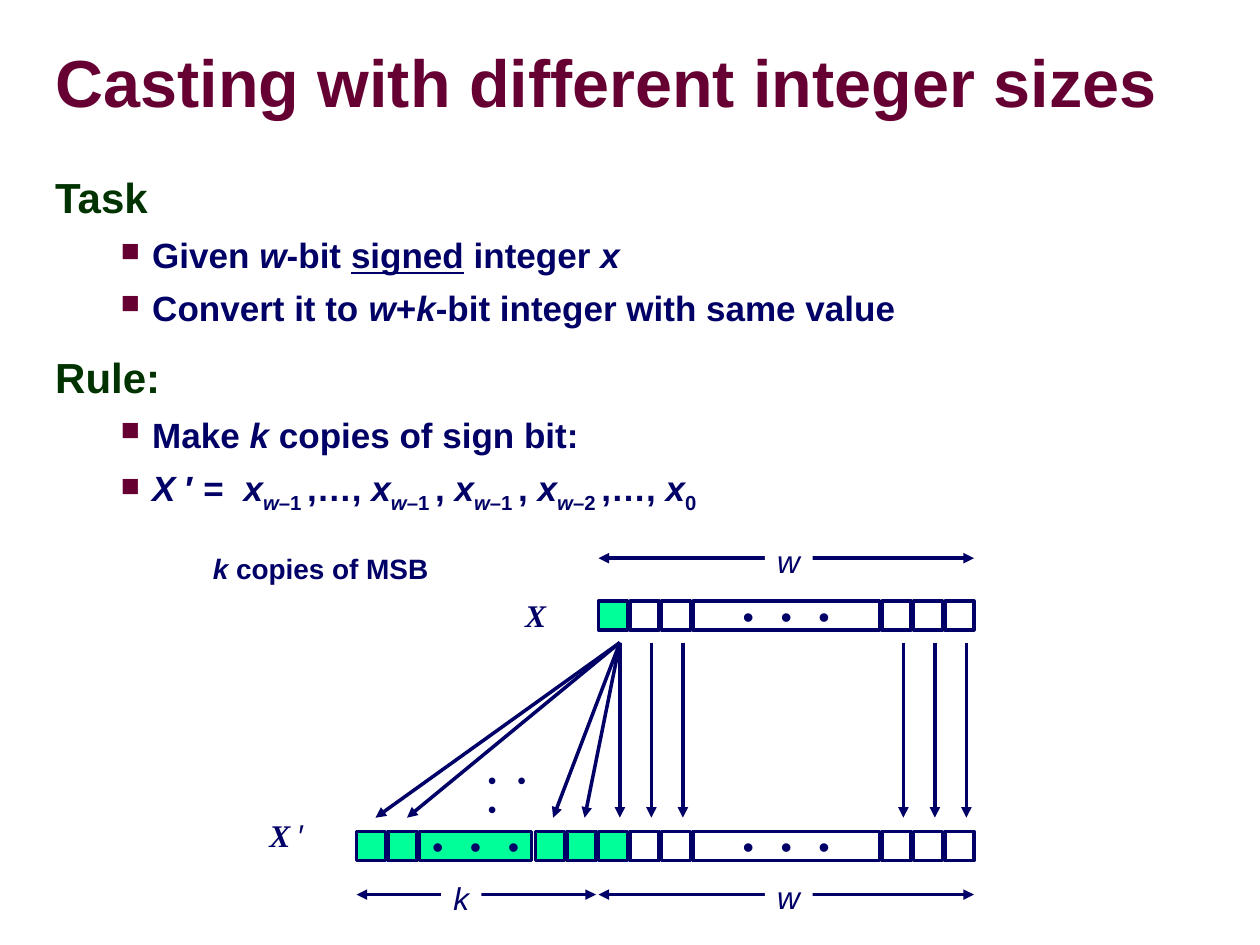
from lxml import etree
from pptx import Presentation
from pptx.dml.color import RGBColor
from pptx.enum import shapes, text
from pptx.oxml import ns
from pptx.util import Inches, Pt

HUES = {"navy": "000066", "wine": "660033", "green": "003300",
        "mint": "00FF99", "white": "FFFFFF"}
INK = {name: RGBColor.from_string(code) for name, code in HUES.items()}
DOTS = "•\u00a0•\u00a0•"


def write(para, runs, size, font="Arial", hue="navy", bold=False):
    for words, style in runs:
        run = para.add_run()
        run.text = words
        face = run.font
        face.name, face.size, face.bold = font, Pt(size), bold
        face.color.rgb = INK[hue]
        face.italic = "i" in style
        if "u" in style:
            face.underline = True
        if "s" in style:
            face._element.set("baseline", "-25000")


def arrow(x1, y1, x2, y2, ends):
    line = slide.shapes.add_connector(
        shapes.MSO_CONNECTOR.STRAIGHT, Inches(x1), Inches(y1), Inches(x2), Inches(y2))
    line.line.color.rgb = INK["navy"]
    line.line.width = Pt(2)
    for end in ends:
        etree.SubElement(line.line._get_or_add_ln(), ns.qn(f"a:{end}"), type="triangle")
    etree.SubElement(line._element.spPr, ns.qn("a:effectLst"))


deck = Presentation()
deck.slide_width, deck.slide_height = Inches(10), Inches(7.5)
slide = deck.slides.add_slide(deck.slide_layouts[6])

title = slide.shapes.add_textbox(Inches(0.44), Inches(0.27), Inches(9.51), Inches(0.83))
frame = title.text_frame
frame.word_wrap = True
frame.vertical_anchor = text.MSO_ANCHOR.MIDDLE
frame.margin_left = frame.margin_right = frame.margin_top = frame.margin_bottom = 0
frame.paragraphs[0].line_spacing = 0.87
write(frame.paragraphs[0], [("Casting with different integer sizes", "")], 38,
      hue="wine", bold=True)

msb = [("x", "i"), ("w", "is"), ("–1 ", "s")]
points = [
    (0, [("Task", "")]),
    (1, [("Given ", ""), ("w", "i"), ("-bit ", ""), ("signed", "u"),
         (" integer ", ""), ("x", "i")]),
    (1, [("Convert it to ", ""), ("w", "i"), ("+", ""), ("k", "i"),
         ("-bit integer with same value", "")]),
    (0, [("Rule:", "")]),
    (1, [("Make ", ""), ("k", "i"), (" copies of sign bit:", "")]),
    (1, [("X ", "i"), ("′ =  ", ""), *msb, (",…, ", ""), *msb, (", ", ""), *msb,
         (", ", ""), ("x", "i"), ("w", "is"), ("–2 ", "s"), (",…, ", ""),
         ("x", "i"), ("0", "s")]),
]
body = slide.shapes.add_textbox(Inches(0.32), Inches(1.34), Inches(9.06), Inches(5.69))
frame = body.text_frame
frame.word_wrap = True
for num, (level, runs) in enumerate(points):
    para = frame.add_paragraph() if num else frame.paragraphs[0]
    para.level = level
    props = para._element.get_or_add_pPr()
    left, dent = (0.79, -0.25) if level else (0.42, -0.4)
    props.set("marL", str(Inches(left)))
    props.set("indent", str(Inches(dent)))
    if level:
        para.space_before = Pt(6.2)
        tint = etree.SubElement(props, ns.qn("a:buClr"))
        etree.SubElement(tint, ns.qn("a:srgbClr"), val=HUES["wine"])
        etree.SubElement(props, ns.qn("a:buSzPct"), val="75000")
        etree.SubElement(props, ns.qn("a:buChar"), char="■")
        write(para, runs, 20, bold=True)
    else:
        para.space_before = Pt(15)
        para.line_spacing = 0.95
        write(para, runs, 24, hue="green", bold=True)

bit, step, wide = 0.23, 0.25, 1.48
word = [(4.75 + step * n, bit) for n in (0, 1, 2, 9, 10, 11)] + [(5.5, wide)]
sign = [(2.83, bit), (3.08, bit), (3.33, 0.89), (4.25, bit), (4.5, bit)]
for top, cells, mint in ((4.77, word, 1), (6.6, sign + word, 6)):
    for num, (left, width) in enumerate(cells):
        cell = slide.shapes.add_shape(
            shapes.MSO_SHAPE.RECTANGLE, Inches(left), Inches(top), Inches(width), Inches(bit))
        cell.shadow.inherit = False
        cell.fill.solid()
        cell.fill.fore_color.rgb = INK["mint" if num < mint else "white"]
        cell.line.color.rgb = INK["navy"]
        cell.line.width = Pt(2)
        if width > bit:
            frame = cell.text_frame
            frame.word_wrap = False
            frame.vertical_anchor = text.MSO_ANCHOR.MIDDLE
            frame.paragraphs[0].alignment = text.PP_ALIGN.CENTER
            write(frame.paragraphs[0], [(DOTS, "")], 18, "Courier New")

for foot in (2.98, 3.23, 4.39, 4.64, 4.92):
    arrow(4.92, 5.1, foot, 6.49, ["tailEnd"])
for x in (5.17, 5.42, 7.17, 7.42, 7.67):
    arrow(x, 5.1, x, 6.49, ["tailEnd"])
for x1, x2, y in ((4.75, 7.73, 4.43), (4.75, 7.73, 7.1), (2.83, 4.73, 7.1)):
    arrow(x1, y, x2, y, ["headEnd", "tailEnd"])

times = "Times New Roman"
labels = [
    (1.59, 4.33, 1.91, 0.36, [("k", "i"), (" copies of MSB", "")], 16, "Arial", True),
    (4.07, 4.68, 0.43, 0.4, [("X", "i")], 18, times, True),
    (2.04, 6.43, 0.49, 0.4, [("X ", "i")], 18, times, True),
    (3.75, 6.02, 0.78, 0.33, [(DOTS, "")], 14, "Courier New", False),
    (6.07, 4.25, 0.38, 0.4, [("w", "i")], 18, "Arial", False),
    (6.07, 6.92, 0.38, 0.4, [("w", "i")], 18, "Arial", False),
    (3.5, 6.93, 0.32, 0.4, [("k", "i")], 18, "Arial", False),
]
for left, top, width, high, runs, size, font, bold in labels:
    box = slide.shapes.add_textbox(Inches(left), Inches(top), Inches(width), Inches(high))
    box.text_frame.word_wrap = runs[0][0] == DOTS
    para = box.text_frame.paragraphs[0]
    write(para, runs, size, font, bold=bold)
    if runs[0][0] == "X ":
        write(para, [("′", "")], size)
    if size == 18 and not bold:
        box.fill.solid()
        box.fill.fore_color.rgb = INK["white"]

deck.save("out.pptx")
